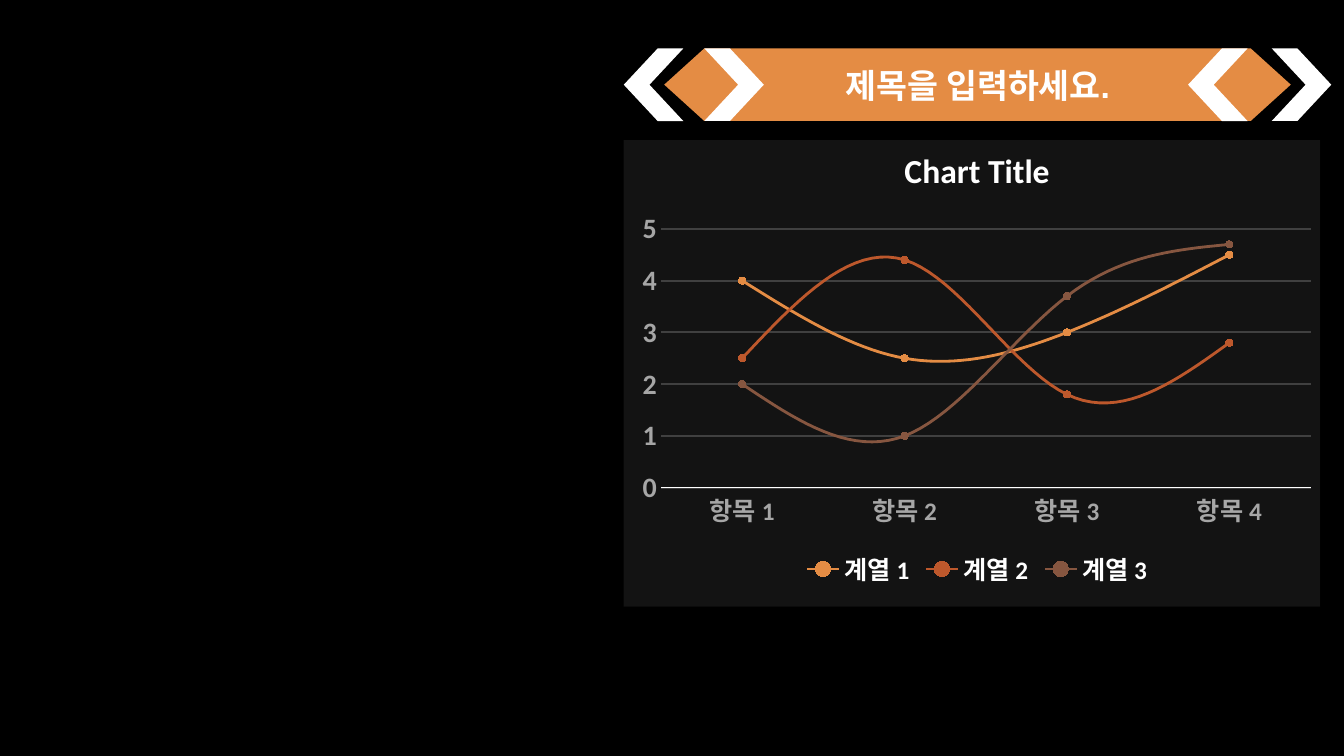
import pptx
import pptx.util
import pptx.chart.data
import pptx.dml.color
import pptx.enum.chart
import pptx.enum.shapes
import pptx.enum.text
import pptx.oxml
import pptx.oxml.ns

Cm = pptx.util.Cm
Pt = pptx.util.Pt
RGB = pptx.dml.color.RGBColor
SHAPE = pptx.enum.shapes.MSO_SHAPE
CHART = pptx.enum.chart
TEXT = pptx.enum.text

BLACK = RGB(0x00, 0x00, 0x00)
WHITE = RGB(0xFF, 0xFF, 0xFF)
ORANGE = RGB(0xE4, 0x8C, 0x44)
RUST = RGB(0xBD, 0x58, 0x2C)
BROWN = RGB(0x86, 0x56, 0x40)
PANEL = RGB(0x26, 0x26, 0x26)
GRID = RGB(0x40, 0x40, 0x40)
LABEL = RGB(0xA6, 0xA6, 0xA6)

CATS = ["항목 1", "항목 2", "항목 3", "항목 4"]
SERIES = [
    ("계열 1", (4, 2.5, 3, 4.5), ORANGE),
    ("계열 2", (2.5, 4.4, 1.8, 2.8), RUST),
    ("계열 3", (2, 1, 3.7, 4.7), BROWN),
]


def paint(shape, color):
    shape.shadow.inherit = False
    shape.fill.solid()
    shape.fill.fore_color.rgb = color
    shape.line.fill.background()


def style(font, size, color, name="Calibri"):
    font.size = Pt(size)
    font.name = name
    font.bold = True
    font.color.rgb = color


def add_panel(slide, x, y, w, h):
    """Half-transparent backdrop of the chart."""
    panel = slide.shapes.add_shape(SHAPE.RECTANGLE, Cm(x), Cm(y), Cm(w), Cm(h))
    paint(panel, PANEL)
    color = panel.fill._xPr.find(".//" + pptx.oxml.ns.qn("a:srgbClr"))
    color.append(pptx.oxml.parse_xml(
        f'<a:alpha {pptx.oxml.ns.nsdecls("a")} val="50000"/>'))


def add_banner(slide, x, y, w, h):
    """Ribbon with pointed ends, four chevrons and the title."""
    group = slide.shapes.add_group_shape().shapes
    tip, edge = 1.02, 2.03
    outline = [(edge, 0), (w - edge, 0), (w - tip, h / 2),
               (w - edge, h), (edge, h), (tip, h / 2)]
    points = [(Cm(x + px), Cm(y + py)) for px, py in outline]
    form = group.build_freeform(*points[0])
    form.add_line_segments(points[1:], close=True)
    paint(form.convert_to_shape(), ORANGE)

    wide = 1.5
    for left, turn in ((0, 180), (edge, 0), (14.22, 180), (w - wide, 0)):
        mark = group.add_shape(
            SHAPE.CHEVRON, Cm(x + left), Cm(y), Cm(wide), Cm(h))
        mark.adjustments[0] = 0.569
        mark.rotation = turn
        paint(mark, WHITE)

    box = group.add_textbox(Cm(x + 3.58), Cm(y + 0.28), Cm(10.69), Cm(1.27))
    frame = box.text_frame
    frame.word_wrap = True
    frame.text = "제목을 입력하세요."
    frame.paragraphs[0].alignment = TEXT.PP_ALIGN.CENTER
    style(frame.paragraphs[0].runs[0].font, 24, WHITE, "Arial")


def place_plot(chart, x, y, w, h):
    """Fix the inner plot area, in fractions of the chart."""
    area = chart._chartSpace.chart.plotArea
    for old in area.findall(pptx.oxml.ns.qn("c:layout")):
        area.remove(old)
    sizes = "".join(f'<c:{key} val="{val}"/>'
                    for key, val in zip("xywh", (x, y, w, h)))
    area.insert(0, pptx.oxml.parse_xml(
        f'<c:layout {pptx.oxml.ns.nsdecls("c")}><c:manualLayout>'
        '<c:layoutTarget val="inner"/><c:xMode val="edge"/>'
        f'<c:yMode val="edge"/>{sizes}</c:manualLayout></c:layout>'))


def style_axes(chart):
    for axis, size in ((chart.category_axis, 18), (chart.value_axis, 20)):
        axis.major_tick_mark = CHART.XL_TICK_MARK.NONE
        axis.minor_tick_mark = CHART.XL_TICK_MARK.NONE
        style(axis.tick_labels.font, size, LABEL)
    base = chart.category_axis.format.line
    base.color.rgb = WHITE
    base.width = Pt(0.75)
    scale = chart.value_axis
    scale.minimum_scale, scale.maximum_scale, scale.major_unit = 0, 5, 1
    scale.format.line.fill.background()
    grid = scale.major_gridlines.format.line
    grid.color.rgb = GRID
    grid.width = Pt(1.5)


def add_graph(slide, x, y, w, h):
    data = pptx.chart.data.CategoryChartData()
    data.categories = CATS
    for name, vals, _ in SERIES:
        data.add_series(name, vals)
    chart = slide.shapes.add_chart(
        CHART.XL_CHART_TYPE.LINE_MARKERS,
        Cm(x), Cm(y), Cm(w), Cm(h), data).chart
    style(chart.font, 20, WHITE)

    chart.has_title = True
    title = chart.chart_title.text_frame
    title.text = "Chart Title"
    style(title.paragraphs[0].runs[0].font, 24, WHITE)
    chart.chart_title.include_in_layout = False

    chart.has_legend = True
    chart.legend.position = CHART.XL_LEGEND_POSITION.BOTTOM
    chart.legend.include_in_layout = False
    style(chart.legend.font, 18, WHITE)

    style_axes(chart)
    place_plot(chart, 0.046, 0.219, 0.933, 0.556)
    plot = chart.plots[0]
    plot.vary_by_categories = False
    for line, (_, _, color) in zip(plot.series, SERIES):
        line.smooth = True
        line.format.line.color.rgb = color
        line.format.line.width = Pt(2)
        mark = line.marker
        mark.style = CHART.XL_MARKER_STYLE.CIRCLE
        mark.size = 5
        mark.format.fill.solid()
        mark.format.fill.fore_color.rgb = color
        mark.format.line.color.rgb = color


def main():
    deck = pptx.Presentation()
    deck.slide_width, deck.slide_height = Cm(33.87), Cm(19.05)
    slide = deck.slides.add_slide(deck.slide_layouts[6])
    slide.background.fill.solid()
    slide.background.fill.fore_color.rgb = BLACK
    add_panel(slide, 15.72, 3.53, 17.55, 11.76)
    add_banner(slide, 15.72, 1.22, 17.83, 1.83)
    add_graph(slide, 15.85, 3.2, 17.55, 11.73)
    deck.save("out.pptx")


if __name__ == "__main__":
    main()
